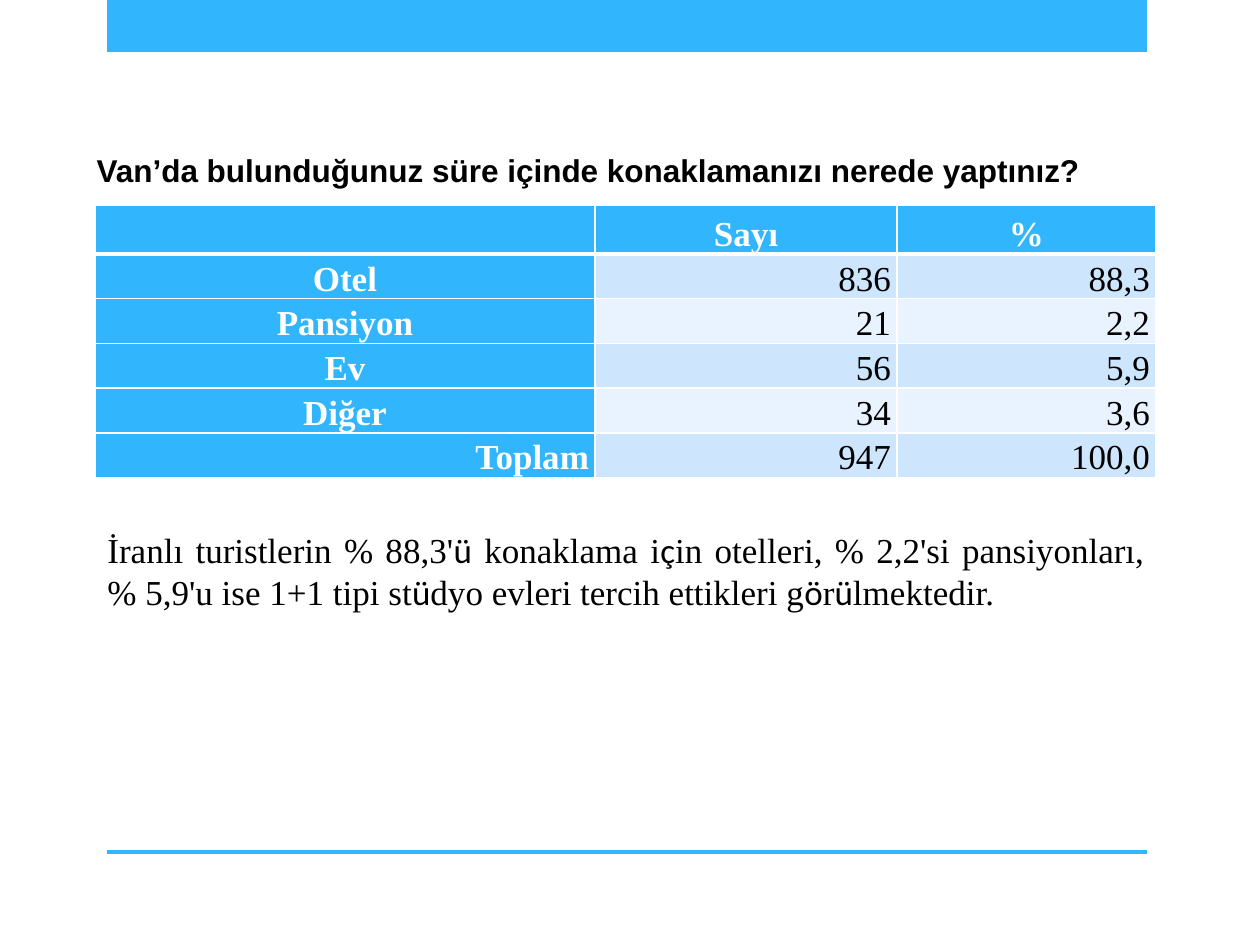
from itertools import groupby

from lxml import etree
from pptx import Presentation
from pptx.dml.color import RGBColor
from pptx.enum.shapes import MSO_SHAPE
from pptx.enum.text import MSO_ANCHOR, MSO_AUTO_SIZE, PP_ALIGN
from pptx.oxml.ns import qn
from pptx.util import Emu, Pt

RECT = MSO_SHAPE.RECTANGLE
TOP, MIDDLE, BOTTOM = MSO_ANCHOR.TOP, MSO_ANCHOR.MIDDLE, MSO_ANCHOR.BOTTOM
CENTER, RIGHT, JUSTIFY = PP_ALIGN.CENTER, PP_ALIGN.RIGHT, PP_ALIGN.JUSTIFY
NO_FIT = MSO_AUTO_SIZE.NONE

BLUE = RGBColor(0x31, 0xB6, 0xFD)
BAND_DARK = RGBColor(0xCE, 0xE5, 0xFE)
BAND_LIGHT = RGBColor(0xE8, 0xF3, 0xFF)
WHITE = RGBColor(0xFF, 0xFF, 0xFF)
BLACK = RGBColor(0x00, 0x00, 0x00)

SERIF, SANS, ACCENT_FONT = "Times New Roman", "Arial", "Calibri"
ACCENTED = "üçö"

QUESTION = "Van’da bulunduğunuz süre içinde konaklamanızı nerede yaptınız?"
FINDING = (
    "İranlı turistlerin % 88,3'ü konaklama için otelleri, % 2,2'si pansiyonları, "
    "% 5,9'u ise 1+1 tipi stüdyo evleri tercih ettikleri görülmektedir."
)
ROWS = [
    ("", "Sayı", "%"),
    ("Otel", "836", "88,3"),
    ("Pansiyon", "21", "2,2"),
    ("Ev", "56", "5,9"),
    ("Diğer", "34", "3,6"),
    ("Toplam", "947", "100,0"),
]


def px(n):
    return Emu(round(n * 914400 / 126))


class SlideBuilder:
    def __init__(self, prs):
        self.slide = prs.slides.add_slide(prs.slide_layouts[5])

    def style(self, r, font, size, color, bold=False):
        r.font.name = font
        r.font.size = Pt(size)
        r.font.bold = bold
        r.font.color.rgb = color

    def frame(self, sp, anchor):
        tf = sp.text_frame
        tf.word_wrap = True
        tf.auto_size = NO_FIT
        tf.vertical_anchor = anchor
        return tf

    def bar(self, x, y, w, h):
        sp = self.slide.shapes.add_shape(RECT, px(x), px(y), px(w), px(h))
        sp.shadow.inherit = False
        sp.fill.solid()
        sp.fill.fore_color.rgb = BLUE
        sp.line.fill.background()

    def title(self, text, x, y, w, h):
        sp = self.slide.shapes.title
        sp.left, sp.top, sp.width, sp.height = px(x), px(y), px(w), px(h)
        tf = self.frame(sp, TOP)
        tf.text = text
        p = tf.paragraphs[0]
        p.alignment = JUSTIFY
        self.style(p.runs[0], SANS, 18, BLACK, True)

    def paragraph(self, text, x, y, w, h):
        sp = self.slide.shapes.add_textbox(px(x), px(y), px(w), px(h))
        p = self.frame(sp, MIDDLE).paragraphs[0]
        p.alignment = JUSTIFY
        for accented, letters in groupby(text, lambda c: c in ACCENTED):
            r = p.add_run()
            r.text = "".join(letters)
            self.style(r, ACCENT_FONT if accented else SERIF, 20, BLACK)

    def borders(self, cell, top, bottom):
        tcPr = cell._tc.get_or_add_tcPr()
        for side, width in (("L", 1), ("R", 1), ("T", top), ("B", bottom)):
            ln = etree.SubElement(tcPr, qn(f"a:ln{side}"), w=str(Pt(width)))
            fill = etree.SubElement(ln, qn("a:solidFill"))
            etree.SubElement(fill, qn("a:srgbClr"), val=str(WHITE))

    def cell(self, cell, text, fill, align, anchor, color, bold):
        cell.margin_left = cell.margin_right = px(6)
        cell.margin_top = cell.margin_bottom = 0
        cell.vertical_anchor = anchor
        cell.fill.solid()
        cell.fill.fore_color.rgb = fill
        cell.text = text
        p = cell.text_frame.paragraphs[0]
        p.alignment = align
        p.line_spacing = 1.15
        for r in p.runs:
            self.style(r, SERIF, 20, color, bold)

    def table(self, rows, x, y, widths, heights):
        table = self.slide.shapes.add_table(
            len(rows), len(widths), px(x), px(y), px(sum(widths)), px(sum(heights))
        ).table
        for col, width in zip(table.columns, widths):
            col.width = px(width)
        for i, (values, height) in enumerate(zip(rows, heights)):
            table.rows[i].height = px(height)
            for j, text in enumerate(values):
                label = i == 0 or j == 0
                band = BAND_DARK if i % 2 else BAND_LIGHT
                centered = label and text != "Toplam"
                cell = table.cell(i, j)
                self.borders(cell, 3 if i == 1 else 1, 3 if i == 0 else 1)
                self.cell(
                    cell,
                    text,
                    BLUE if label else band,
                    CENTER if centered else RIGHT,
                    BOTTOM if i == 0 else TOP,
                    WHITE if label else BLACK,
                    label,
                )


def main():
    prs = Presentation()
    prs.slide_width, prs.slide_height = px(1260), px(945)
    s = SlideBuilder(prs)
    s.bar(107, 0, 1040, 52)
    s.bar(107, 850, 1040, 4)
    s.table(ROWS, 95, 205, [500, 302, 259], [49] + [44] * 5)
    s.paragraph(FINDING, 95, 522, 1062, 97)
    s.title(QUESTION, 84, 145, 1052, 50)
    prs.save("out.pptx")


if __name__ == "__main__":
    main()
